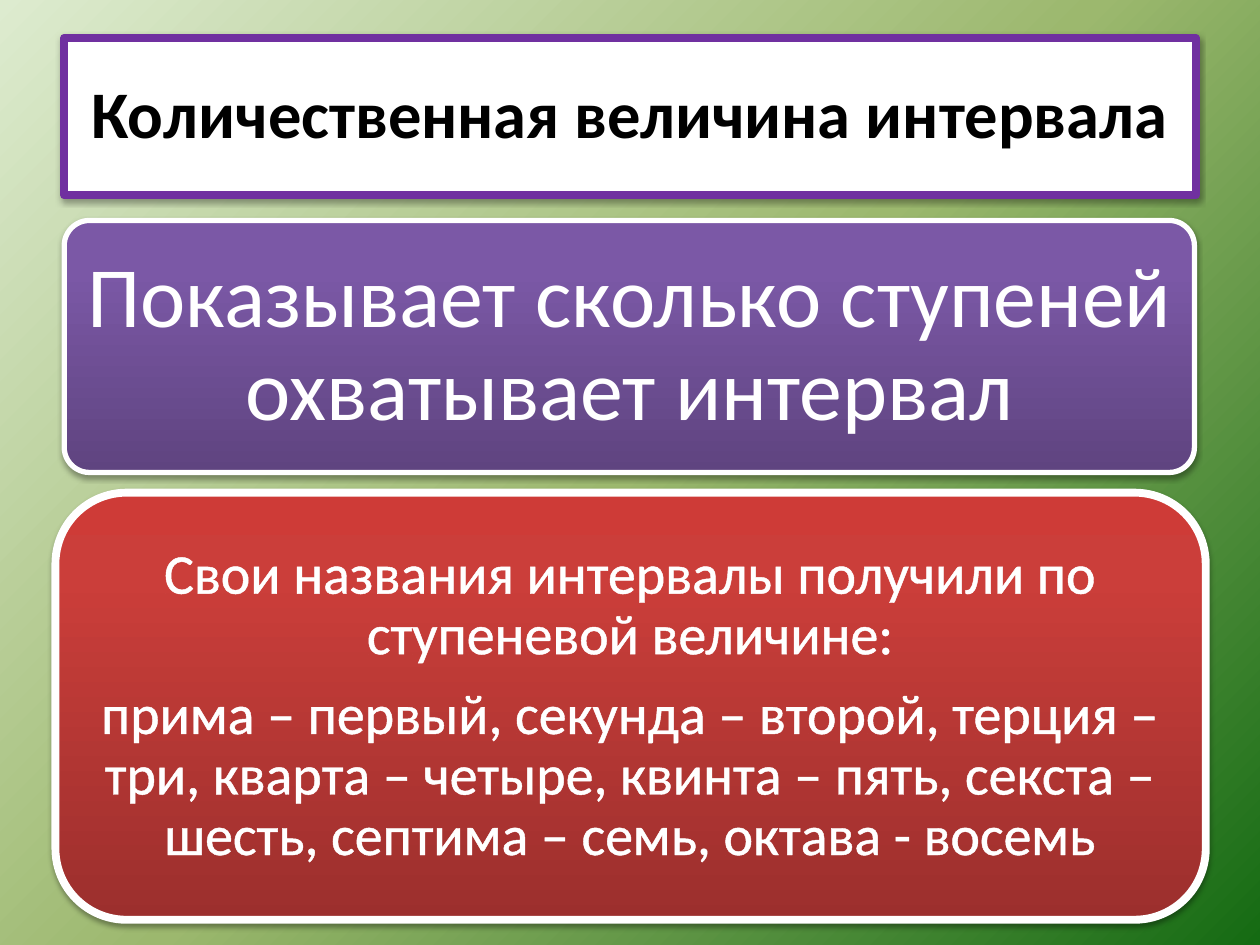
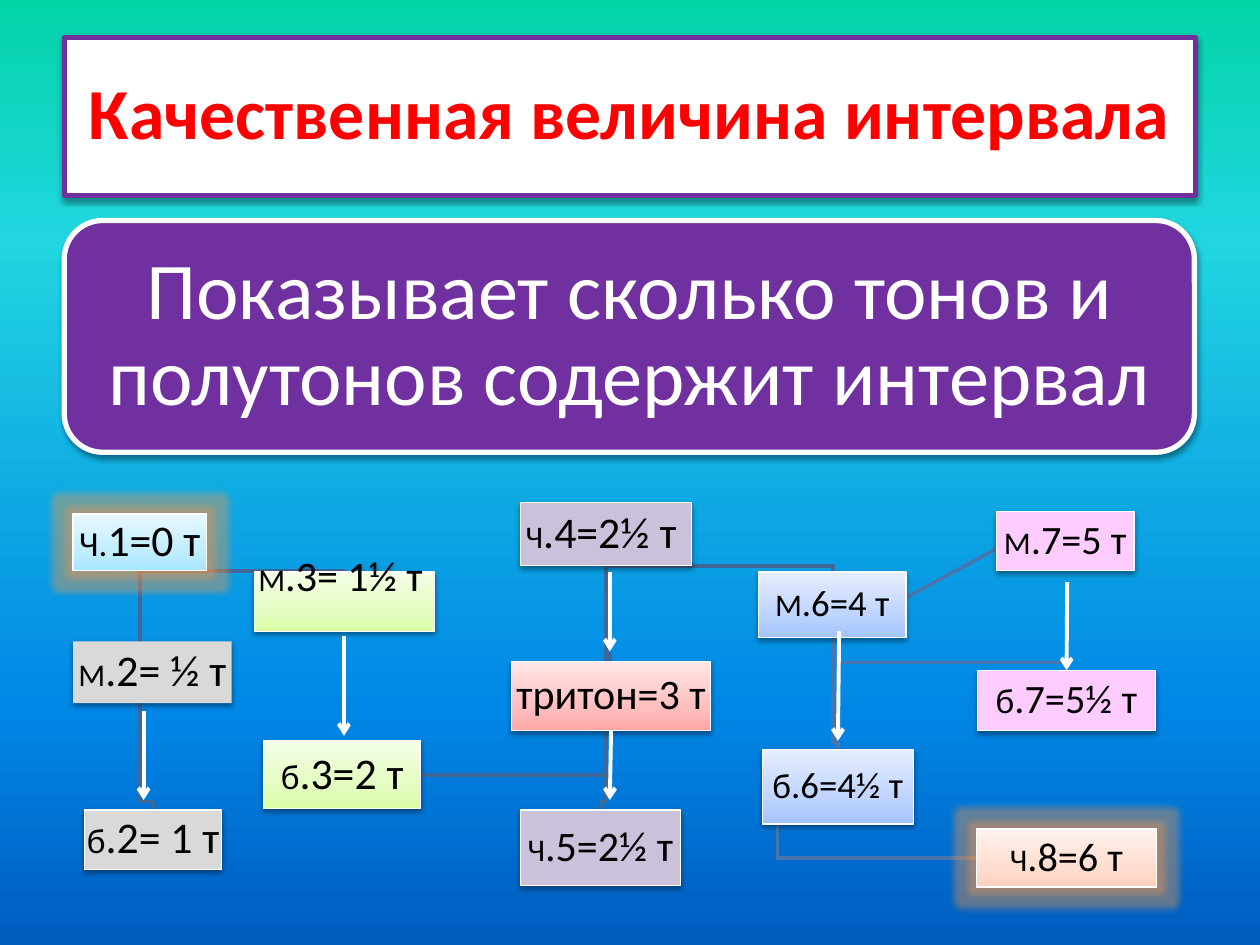
from lxml import etree
from pptx import Presentation
from pptx import util as u
from pptx.dml.color import RGBColor
from pptx.enum import shapes, text
from pptx.oxml import parse_xml
from pptx.oxml.ns import nsdecls, qn

COLORS = {
    "white": "FFFFFF", "black": "000000", "red": "FF0000", "purple": "7030A0",
    "gray": "D9D9D9", "lilac": "CCC1DA", "pink": "FFCCFF", "orange": "F79646",
    "branch": "3F6797", "far_branch": "4875AC",
}
GRADIENTS = {
    "meadow": (45, [(0, "DDEBCF"), (50, "9CB86E"), (100, "156B13")]),
    "sea": (90, [(0, "03D4A8"), (25, "21D6E0"), (75, "0087E6"), (100, "005CBF")]),
    "violet": (270, [(0, "5F4480"), (80, "7B58A6"), (100, "7C57A8")]),
    "brick": (270, [(0, "9C2F2D"), (80, "CB3E3A"), (100, "CE3B37")]),
    "sky": (270, [(0, "A7E6FF"), (35, "C1EDFF"), (100, "E7F8FF")]),
    "lime": (270, [(0, "DAFDA7"), (35, "E4FCC2"), (100, "F5FFE7")]),
    "rose": (270, [(0, "FFA6A5"), (35, "FFC0BF"), (100, "FFE7E7")]),
    "blue": (270, [(0, "A4C4FF"), (35, "BFD4FF"), (100, "E6EEFF")]),
    "peach": (270, [(0, "FFD2BD"), (35, "FFDED0"), (100, "FFF2ED")]),
}
FRAME = {"word_wrap": True, "auto_size": text.MSO_AUTO_SIZE.NONE,
         "vertical_anchor": text.MSO_ANCHOR.MIDDLE}
PARAGRAPH = {"alignment": text.PP_ALIGN.CENTER, "line_spacing": 0.9,
             "space_before": u.Pt(0), "space_after": u.Pt(0)}
SHADOW = ('<a:outerShdw %s blurRad="39400" dist="{}" dir="5400000" rotWithShape="0">'
          '<a:srgbClr val="000000"><a:alpha val="{}000"/></a:srgbClr></a:outerShdw>' % nsdecls("a"))
GLOW = ('<a:glow %s rad="101600"><a:srgbClr val="%s"><a:alpha val="40000"/></a:srgbClr></a:glow>'
        % (nsdecls("a"), COLORS["orange"]))
SHADOWS = {"soft": SHADOW.format(22900, 35), "deep": SHADOW.format(20300, 38), "glow": GLOW}


def paint(fill, owner, color):
    if color in COLORS:
        fill.solid()
        fill.fore_color.rgb = RGBColor.from_string(COLORS[color])
        return
    angle, stops = GRADIENTS[color]
    fill.gradient()
    fill.gradient_angle = 360 - angle
    stop_list = next(owner.iter(qn("a:gsLst")))
    for stop in list(stop_list):
        stop_list.remove(stop)
    for position, shade in stops:
        stop = etree.SubElement(stop_list, qn("a:gs"), pos=str(position * 1000))
        etree.SubElement(stop, qn("a:srgbClr"), val=shade)


def dress(shape, fill, edge, width, effect, insets, paragraphs, color, bold=False):
    paint(shape.fill, shape.element.spPr, fill)
    if edge:
        paint(shape.line.fill, shape.element.spPr, edge)
        shape.line.width = u.Pt(width)
    else:
        shape.line.fill.background()
    shape.shadow.inherit = False
    shape.element.spPr.find(qn("a:effectLst")).append(parse_xml(SHADOWS[effect]))
    frame = shape.text_frame
    side, end = insets
    margins = {"margin_left": side, "margin_right": side, "margin_top": end, "margin_bottom": end}
    for name, value in margins.items():
        setattr(frame, name, u.Inches(value))
    for name, value in FRAME.items():
        setattr(frame, name, value)
    for index, runs in enumerate(paragraphs):
        paragraph = frame.add_paragraph() if index else frame.paragraphs[0]
        for name, value in PARAGRAPH.items():
            setattr(paragraph, name, value)
        for words, size in runs:
            run = paragraph.add_run()
            run.text = words
            for name, value in {"name": "Calibri", "size": u.Pt(size), "bold": bold}.items():
                setattr(run.font, name, value)
            run.font.color.rgb = RGBColor.from_string(COLORS[color])


prs = Presentation()
prs.slide_width, prs.slide_height = u.Inches(10), u.Inches(7.5)
quantity = prs.slides.add_slide(prs.slide_layouts[1])
quality = prs.slides.add_slide(prs.slide_layouts[5])
for slide, backdrop in ((quantity, "meadow"), (quality, "sea")):
    paint(slide.background.fill, slide.element, backdrop)

names = quantity.placeholders[1]
panels = [
    (quantity, quantity.shapes.title, (0.51, 0.3, 8.98, 1.25), 0.1667, "white", "purple", 4.5,
     "soft", (0.16, 0.08), [[("Количественная величина интервала", 38)]], "black", True),
    (quantity, None, (0.51, 1.75, 8.97, 2), 0.1, "violet", "white", 3,
     "soft", (0.1, 0.07), [[("Показывает сколько ступеней охватывает интервал", 49)]], "white", False),
    (quantity, names, (0.44, 3.91, 9.13, 3.39), 0.1667, "brick", "white", 4.5,
     "soft", (0.13, 0.07),
     [[("Свои названия интервалы получили по ступеневой величине:", 32)],
      [("прима – первый, секунда – второй, терция – три, кварта – четыре, квинта – пять, "
        "секста – шесть, септима – семь, октава - восемь", 32)]], "white", False),
    (quality, quality.shapes.title, (0.51, 0.3, 8.98, 1.25), 0.1, "white", "purple", 3,
     "deep", (0.09, 0.06), [[("Качественная величина интервала", 41)]], "red", True),
    (quality, None, (0.51, 1.75, 8.97, 1.84), 0.1667, "purple", "white", 3,
     "deep", (0.19, 0.1), [[("Показывает сколько тонов и полутонов содержит интервал", 46)]],
     "white", False),
]
for slide, panel, place, corner, *look in panels:
    place = [u.Inches(length) for length in place]
    if panel is None:
        panel = slide.shapes.add_shape(shapes.MSO_SHAPE.ROUNDED_RECTANGLE, *place)
        panel.adjustments[0] = corner
    else:
        panel.left, panel.top, panel.width, panel.height = place
        panel.element.spPr.insert(1, parse_xml(
            f'<a:prstGeom {nsdecls("a")} prst="roundRect"><a:avLst>'
            f'<a:gd name="adj" fmla="val {round(corner * 100000)}"/></a:avLst></a:prstGeom>'))
    dress(panel, *look)

for paragraph in names.text_frame.paragraphs:
    paragraph.space_after = u.Pt(11)
    properties = paragraph._p.get_or_add_pPr()
    properties.set("marL", "0")
    properties.set("indent", "0")
    etree.SubElement(properties, qn("a:buNone"))
    for run in paragraph.runs:
        run._r.get_or_add_rPr().insert(0, parse_xml(
            f'<a:ln {nsdecls("a")} w="9525"><a:solidFill>'
            f'<a:srgbClr val="{COLORS["white"]}"/></a:solidFill></a:ln>'))

branches = [
    ("branch", [(4.81, 4.49), (4.81, 6.15), (3.34, 6.15)]),
    ("far_branch", [(6.61, 5.06), (6.61, 5.26), (8.46, 5.26), (8.46, 5.32)]),
    ("far_branch", [(6.17, 6.54), (6.17, 6.81), (7.75, 6.81)]),
    ("far_branch", [(6.61, 5.06), (6.61, 5.89), (6.65, 5.89), (6.65, 5.95)]),
    ("branch", [(4.81, 4.49), (6.61, 4.49), (6.61, 4.54)]),
    ("branch", [(4.81, 4.49), (4.81, 6.36), (4.77, 6.36), (4.77, 6.43)]),
    ("branch", [(4.81, 4.49), (4.81, 5.18), (4.84, 5.18), (4.84, 5.25)]),
    ("branch", [(1.11, 4.53), (2.73, 4.53), (2.73, 4.54)]),
    ("branch", [(1.11, 4.53), (1.11, 6.36), (1.22, 6.36), (1.22, 6.43)]),
]
for color, corners in branches:
    start, *bends = [(u.Inches(x), u.Inches(y)) for x, y in corners]
    builder = quality.shapes.build_freeform(*start)
    builder.add_line_segments(bends, close=False)
    branch = builder.convert_to_shape()
    branch.fill.background()
    branch.line.color.rgb = RGBColor.from_string(COLORS[color])
    branch.line.width = u.Pt(2)
    branch.shadow.inherit = False

sixth_to_seventh = quality.shapes.add_connector(
    shapes.MSO_CONNECTOR.STRAIGHT, *[u.Inches(v) for v in (6.61, 5.06, 8.46, 4.06)])

intervals = [
    ("ч1", (0.58, 4.08, 1.06, 0.45), "sky", [("Ч.", 20), ("1=0 т", 25)]),
    ("м2", (0.58, 5.09, 1.26, 0.49), "gray", [("М", 18), (".2= ½ т ", 25)]),
    ("б2", (0.67, 6.43, 1.09, 0.47), "gray", [("б", 20), (".2= 1 т ", 25)]),
    ("м3", (2.02, 4.54, 1.43, 0.47), "lime", [("М", 18), (".3= 1½ т", 24)]),
    ("ч4", (4.13, 3.99, 1.36, 0.5), "lilac", [("Ч", 18), (".4=2½ т ", 25)]),
    ("тритон", (4.06, 5.25, 1.58, 0.55), "rose", [("тритон=3 т", 24)]),
    ("ч5", (4.13, 6.43, 1.27, 0.6), "lilac", [("Ч", 18), (".5=2½ т", 24)]),
    ("м6", (6.02, 4.54, 1.17, 0.52), "blue", [("М", 18), (".6=4 т", 21)]),
    ("б6", (6.05, 5.95, 1.2, 0.59), "blue", [("б", 20), (".6=4½ т", 21)]),
    ("ч8", (7.75, 6.58, 1.43, 0.46), "peach", [("Ч", 18), (".8=6 т", 23)]),
    ("м7", (7.91, 4.06, 1.09, 0.47), "pink", [("М", 18), (".7=5 т", 23)]),
    ("б7", (7.76, 5.32, 1.41, 0.48), "pink", [("б", 20), (".7=5½ т", 23)]),
    ("б3", (2.09, 5.88, 1.25, 0.54), "lime", [("б", 20), (".3=2 т", 25)]),
]
cards = {}
for interval, place, fill, runs in intervals:
    card = quality.shapes.add_shape(shapes.MSO_SHAPE.RECTANGLE, *[u.Inches(v) for v in place])
    dress(card, fill, None if interval == "м2" else "white", 0.75,
          "glow" if interval in ("ч1", "ч8") else "deep", (0.01, 0.01), [runs], "black")
    cards[interval] = card

minor_third = cards["м3"].text_frame
minor_third.vertical_anchor = text.MSO_ANCHOR.TOP
minor_third.margin_top = u.Inches(-0.13)
minor_third.margin_left = u.Inches(0.03)
minor_third.paragraphs[0].alignment = text.PP_ALIGN.LEFT

sixth_to_seventh.begin_connect(cards["м6"], 2)
sixth_to_seventh.end_connect(cards["м7"], 0)
links = [(sixth_to_seventh, "far_branch", 2)]
arrows = [
    ((1.14, 5.64, 1.14, 6.35), None, None),
    ((2.73, 5.05, 2.73, 5.84), None, None),
    ((4.84, 4.54, 4.84, 5.17), None, None),
    ((4.84, 5.8, 4.84, 6.35), "тритон", None),
    ((6.66, 5.01, 6.65, 5.88), None, None),
    ((8.47, 4.62, 8.46, 5.32), None, "б7"),
]
for ends, source, target in arrows:
    arrow = quality.shapes.add_connector(
        shapes.MSO_CONNECTOR.STRAIGHT, *[u.Inches(v) for v in ends])
    if source:
        arrow.begin_connect(cards[source], 2)
    if target:
        arrow.end_connect(cards[target], 0)
    links.append((arrow, "white", 2.25))
for link, color, width in links:
    link.line.color.rgb = RGBColor.from_string(COLORS[color])
    link.line.width = u.Pt(width)
    if link is not sixth_to_seventh:
        etree.SubElement(link.line._get_or_add_ln(), qn("a:tailEnd"), type="arrow")
    etree.SubElement(link.element.spPr, qn("a:effectLst"))

prs.save("out.pptx")
